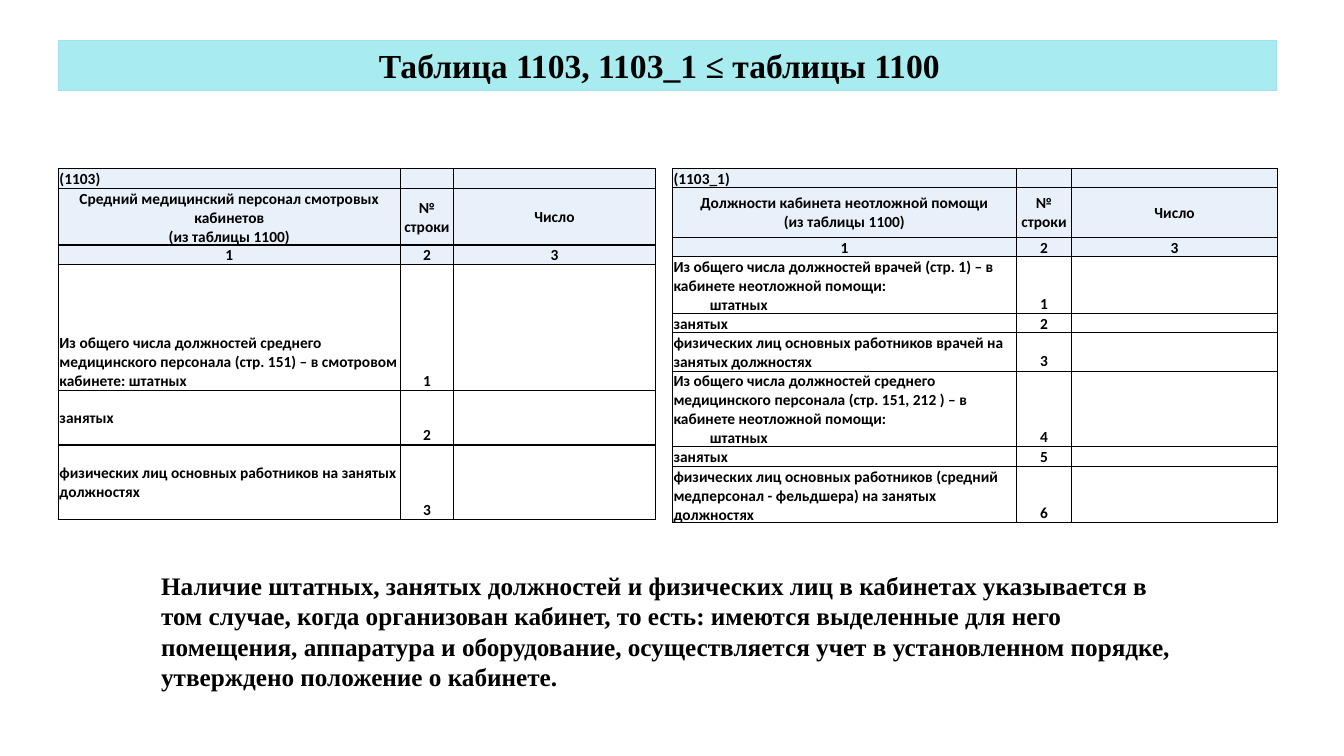
from dataclasses import dataclass

from lxml.etree import SubElement
from pptx import Presentation
from pptx.dml.color import RGBColor
from pptx.enum.shapes import MSO_SHAPE as Shape
from pptx.enum.text import MSO_ANCHOR as Anchor, MSO_AUTO_SIZE as AutoSize, PP_ALIGN as Align
from pptx.oxml.ns import qn
from pptx.util import Emu, Pt


@dataclass(frozen=True)
class Theme:
    ink: str = "000000"
    banner: str = "A8ECEF"
    banner_edge: str = "A4DEF4"
    header: str = "E8F1FA"
    serif: str = "Times New Roman"
    sans: str = "Calibri"
    title_size: int = 24
    note_size: int = 18
    cell_size: int = 11
    edge_width: float = 0.75
    border_width: int = 1


THEME = Theme()
HEADER_ROWS = 3
SUBITEM_INDENT = 36

TITLE = "Таблица 1103, 1103_1 ≤ таблицы 1100"
NOTE = (
    "Наличие штатных, занятых должностей и физических лиц в кабинетах указывается в том случае, "
    "когда организован кабинет, то есть: имеются выделенные для него помещения, аппаратура и "
    "оборудование, осуществляется учет в установленном порядке, утверждено положение о кабинете."
)

EXAM_ROOM = {
    "code": "(1103)",
    "heading": "Средний медицинский персонал смотровых кабинетов\v(из таблицы 1100)",
    "columns": (339, 53, 200),
    "rows": (20, 56, 19, 125, 54, 74),
    "items": (
        ("Из общего числа должностей среднего медицинского персонала (стр. 151) – "
         "в смотровом кабинете: штатных", Anchor.BOTTOM),
        ("занятых", Anchor.MIDDLE),
        ("физических лиц основных работников на занятых должностях", Anchor.MIDDLE),
    ),
}
URGENT_ROOM = {
    "code": "(1103_1)",
    "heading": "Должности кабинета неотложной помощи\v(из таблицы 1100)",
    "columns": (341, 55, 204),
    "rows": (19, 49, 19, 56, 19, 38, 75, 19, 56),
    "items": (
        ("Из общего числа должностей врачей (стр. 1) – в кабинете неотложной помощи:\nштатных",
         Anchor.BOTTOM),
        ("занятых", Anchor.MIDDLE),
        ("физических лиц основных работников врачей на занятых должностях", Anchor.MIDDLE),
        ("Из общего числа должностей среднего медицинского персонала (стр. 151, 212 ) – "
         "в кабинете неотложной помощи:\nштатных", Anchor.BOTTOM),
        ("занятых", Anchor.MIDDLE),
        ("физических лиц основных работников (средний медперсонал - фельдшера) "
         "на занятых должностях", Anchor.MIDDLE),
    ),
}


def px(length):
    return Emu(length * 9144)


def color(value):
    return RGBColor.from_string(value)


def style_text(frame, family, size, align):
    for paragraph in frame.paragraphs:
        paragraph.alignment = align
        for run in paragraph.runs:
            run.font.name = family
            run.font.size = Pt(size)
            run.font.bold = True
            run.font.color.rgb = color(THEME.ink)


def add_banner(slide, box):
    banner = slide.shapes.add_shape(Shape.RECTANGLE, *map(px, box))
    banner.shadow.inherit = False
    banner.fill.solid()
    banner.fill.fore_color.rgb = color(THEME.banner)
    banner.line.color.rgb = color(THEME.banner_edge)
    banner.line.width = Pt(THEME.edge_width)
    frame = banner.text_frame
    frame.word_wrap = True
    frame.auto_size = AutoSize.SHAPE_TO_FIT_TEXT
    frame.margin_right = px(26)
    frame.text = TITLE
    style_text(frame, THEME.serif, THEME.title_size, Align.CENTER)


def add_note(slide, box):
    frame = slide.shapes.add_textbox(*map(px, box)).text_frame
    frame.word_wrap = True
    frame.auto_size = AutoSize.SHAPE_TO_FIT_TEXT
    frame.text = NOTE
    style_text(frame, THEME.serif, THEME.note_size, Align.LEFT)


def add_borders(cell):
    properties = cell._tc.get_or_add_tcPr()
    for side in ("a:lnL", "a:lnR", "a:lnT", "a:lnB"):
        border = SubElement(properties, qn(side), w=str(Pt(THEME.border_width)))
        ink = SubElement(border, qn("a:solidFill"))
        SubElement(ink, qn("a:srgbClr"), val=THEME.ink)


def fill_cell(cell, text, anchor, align, is_header):
    cell.margin_left = cell.margin_right = cell.margin_top = px(1)
    cell.margin_bottom = 0
    cell.vertical_anchor = anchor
    add_borders(cell)
    if is_header:
        cell.fill.solid()
        cell.fill.fore_color.rgb = color(THEME.header)
    else:
        cell.fill.background()
    frame = cell.text_frame
    frame.text = text
    style_text(frame, THEME.sans, THEME.cell_size, align)
    for subitem in frame.paragraphs[1:]:
        subitem._p.get_or_add_pPr().set("marL", str(px(SUBITEM_INDENT)))
    if not text:
        SubElement(frame.paragraphs[0]._p, qn("a:endParaRPr"), sz=str(THEME.cell_size * 100))


def add_staff_table(slide, box, staff):
    grid = slide.shapes.add_table(len(staff["rows"]), len(staff["columns"]), *map(px, box)).table
    grid.first_row = grid.horz_banding = False
    for column, width in zip(grid.columns, staff["columns"]):
        column.width = px(width)
    for row, height in zip(grid.rows, staff["rows"]):
        row.height = px(height)

    lines = [
        ((staff["code"], Anchor.BOTTOM), "", ""),
        ((staff["heading"], Anchor.MIDDLE), "№ строки", "Число"),
        (("1", Anchor.MIDDLE), "2", "3"),
    ]
    lines += [(item, str(number), "") for number, item in enumerate(staff["items"], 1)]
    for index, ((label, anchor), number, value) in enumerate(lines):
        is_header = index < HEADER_ROWS
        label_align = Align.CENTER if 0 < index < HEADER_ROWS else Align.LEFT
        number_anchor = Anchor.MIDDLE if is_header else Anchor.BOTTOM
        fill_cell(grid.cell(index, 0), label, anchor, label_align, is_header)
        for position, text in enumerate((number, value), 1):
            fill_cell(grid.cell(index, position), text, number_anchor, Align.CENTER, is_header)


def main():
    deck = Presentation()
    deck.slide_width, deck.slide_height = px(1333), px(750)
    slide = deck.slides.add_slide(deck.slide_layouts[6])
    add_banner(slide, (58, 40, 1208, 50))
    add_note(slide, (150, 561, 1033, 131))
    add_staff_table(slide, (58, 167, 592, 348), EXAM_ROOM)
    add_staff_table(slide, (667, 167, 600, 350), URGENT_ROOM)
    deck.save("out.pptx")


if __name__ == "__main__":
    main()
